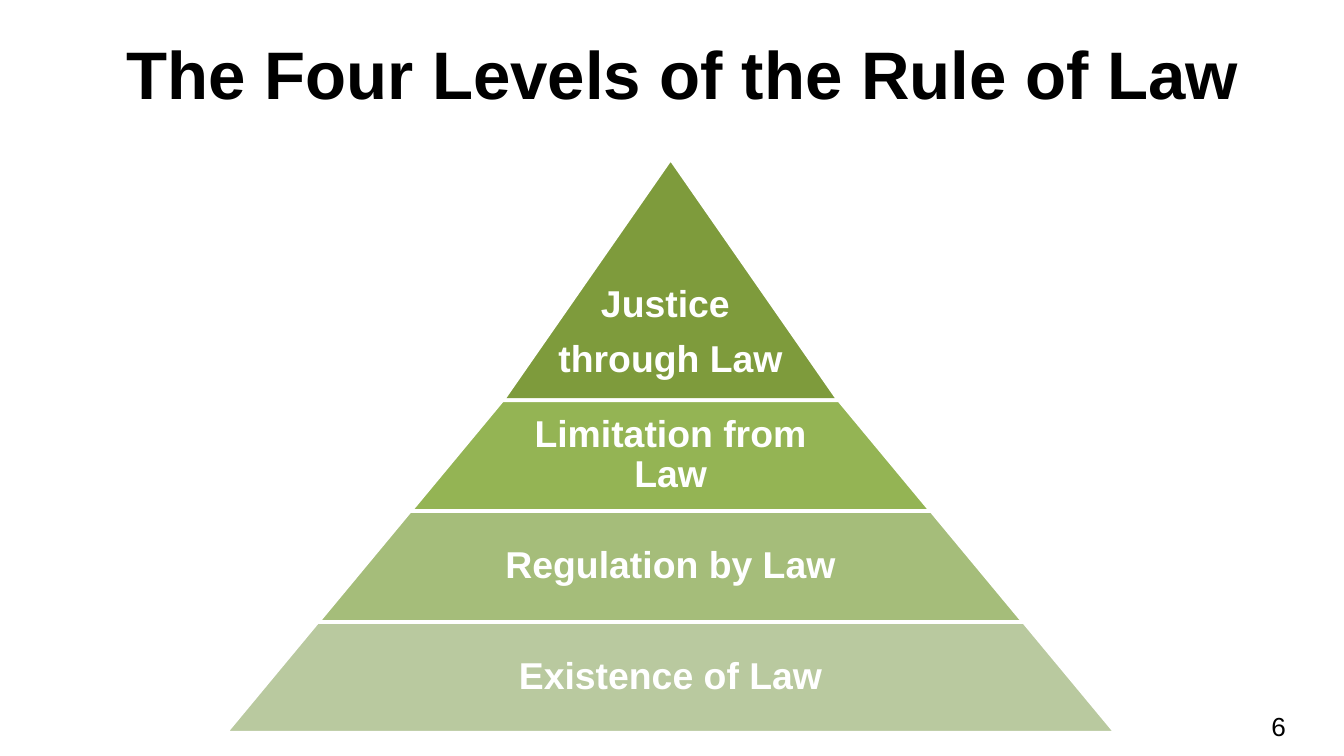
from pptx import Presentation
from pptx.dml.color import RGBColor
from pptx.enum.shapes import MSO_SHAPE
from pptx.enum.text import MSO_ANCHOR, MSO_AUTO_SIZE, PP_ALIGN
from pptx.util import Pt

TITLE = "The Four Levels of the Rule of Law"
NUMBER = "6"
TIERS = [
    (["Justice ", "through Law"], "7E9B3C"),
    (["Limitation from Law"], "94B454"),
    (["Regulation by Law"], "A5BD7A"),
    (["Existence of Law"], "B9C99F"),
]
MID, TOP = 359.3, 85
PEAK, BAND = 129.4, 59.4
WIDTH, GROW = 180, 99
SLOPE = 0.83
SHARE = 0.65
DROP = 57


def color(code):
    return RGBColor.from_string(code)


def write(shape, lines, size, code, bold, anchor, inset, align=PP_ALIGN.LEFT):
    frame = shape.text_frame
    frame.word_wrap = True
    frame.auto_size = MSO_AUTO_SIZE.NONE
    frame.vertical_anchor = anchor
    frame.margin_left = frame.margin_right = Pt(inset)
    frame.margin_top = frame.margin_bottom = Pt(inset)
    for i, line in enumerate(lines):
        para = frame.add_paragraph() if i else frame.paragraphs[0]
        para.alignment = align
        run = para.add_run()
        run.text = line
        font = run.font
        font.name, font.size, font.bold = "Arial", Pt(size), bold
        font.color.rgb = color(code)
    return frame


def place(shape, *box):
    shape.left, shape.top, shape.width, shape.height = map(Pt, box)


def draw_tier(slide, i, lines, fill):
    width = WIDTH + GROW * i
    high = BAND if i else PEAK
    top = TOP + (PEAK + BAND * (i - 1) if i else 0)
    band = slide.shapes.add_shape(
        MSO_SHAPE.TRAPEZOID, Pt(MID - width / 2), Pt(top), Pt(width), Pt(high))
    band.adjustments[0] = SLOPE if i else width / 2 / high
    band.shadow.inherit = False
    band.fill.solid()
    band.fill.fore_color.rgb = color(fill)
    band.line.color.rgb = color("FFFFFF")
    band.line.width = Pt(2)

    span = width * SHARE if i else width
    label = slide.shapes.add_textbox(
        Pt(MID - span / 2), Pt(top), Pt(span), Pt(high))
    frame = write(label, lines, 20, "FFFFFF", True,
                  MSO_ANCHOR.MIDDLE, 2, PP_ALIGN.CENTER)
    if not i:
        frame.margin_top = Pt(2 + DROP)
    for para in frame.paragraphs:
        para.line_spacing = 0.9
        para.space_after = Pt(7.7)


def main():
    deck = Presentation()
    deck.slide_width, deck.slide_height = Pt(720), Pt(405)
    slide = deck.slides.add_slide(deck.slide_layouts[5])
    title = slide.shapes.title
    place(title, 60.5, 0, 624, 67.7)
    write(title, [TITLE], 36, "000000", True, MSO_ANCHOR.BOTTOM, 7.2)
    for i, (lines, fill) in enumerate(TIERS):
        draw_tier(slide, i, lines, fill)
    number = slide.shapes.add_textbox(Pt(674), Pt(373.7), Pt(43.2), Pt(31))
    write(number, [NUMBER], 14, "000000", False, MSO_ANCHOR.MIDDLE, 7.2)
    deck.save("out.pptx")


if __name__ == "__main__":
    main()
